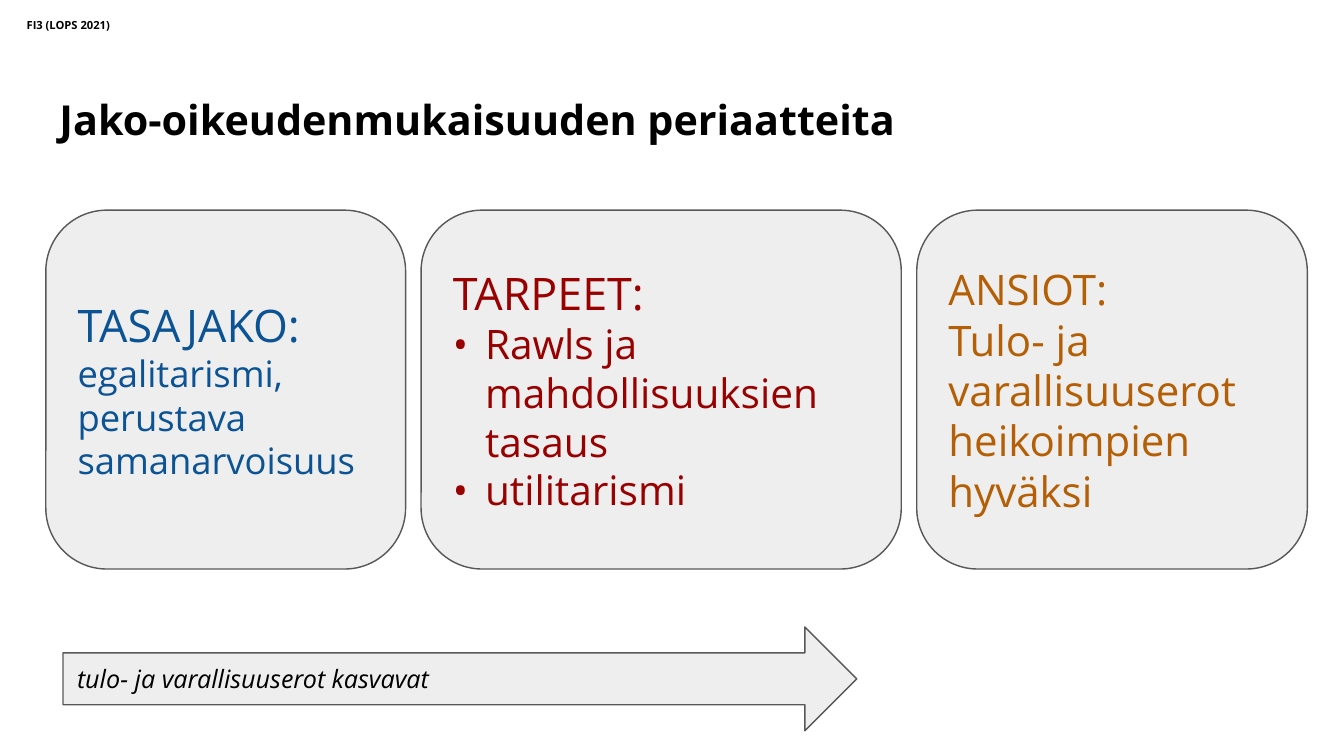
from dataclasses import dataclass

from lxml import etree
from pptx import Presentation
from pptx import util as u
from pptx.dml.color import RGBColor
from pptx.enum import shapes, text
from pptx.oxml import ns

WIDTH, HEIGHT = u.Inches(26.67), u.Inches(15)
FONT = "Open Sans"
BLACK = RGBColor(0x00, 0x00, 0x00)
PANEL = RGBColor(0xEE, 0xEE, 0xEE)
OUTLINE = RGBColor(0x58, 0x58, 0x58)
BLUE = RGBColor(0x0B, 0x53, 0x94)
RED = RGBColor(0x99, 0x00, 0x00)
ORANGE = RGBColor(0xB4, 0x5F, 0x06)

# Percentages of the slide's width (x) and height (y)
CARD_LEFT, CARD_GAP, CARD_INSET = 3.41, 1.15, 1.35
CARD_TOP, CARD_HEIGHT = 27.8, 47.47


@dataclass(frozen=True)
class Area:
    """A rectangle in percentages of the slide's size."""
    left: float
    top: float
    width: float
    height: float

    def lengths(self) -> tuple[int, int, int, int]:
        return (int(WIDTH * self.left / 100), int(HEIGHT * self.top / 100),
                int(WIDTH * self.width / 100), int(HEIGHT * self.height / 100))


@dataclass(frozen=True)
class Line:
    words: str
    size: int
    color: RGBColor = BLACK
    bold: bool = False
    italic: bool = False
    bullet: bool = False


@dataclass(frozen=True)
class Card:
    width: float
    text_height: float
    lines: list[Line]


CARDS = [
    Card(26.77, 31.33, [Line("TASAJAKO:", 64, BLUE),
                        Line("egalitarismi,", 52, BLUE),
                        Line("perustava samanarvoisuus", 52, BLUE)]),
    Card(35.73, 40.87, [Line("TARPEET:", 64, RED),
                        Line("Rawls ja mahdollisuuksien tasaus", 58, RED, bullet=True),
                        Line("utilitarismi", 58, RED, bullet=True)]),
    Card(29.06, 41.53, [Line("ANSIOT:", 60, ORANGE),
                        Line("Tulo- ja varallisuuserot heikoimpien hyväksi", 60, ORANGE)]),
]


def add_bullet(para) -> None:
    properties = para._p.get_or_add_pPr()
    indent = u.Inches(0.64)
    properties.set("marL", str(indent))
    properties.set("indent", str(-indent))
    etree.SubElement(properties, ns.qn("a:buFont")).set("typeface", FONT)
    etree.SubElement(properties, ns.qn("a:buChar")).set("char", "•")


def add_text(parent, area: Area, lines: list[Line], inset: float = 0.27,
             anchor=text.MSO_ANCHOR.MIDDLE, wrap: bool = True,
             fit=text.MSO_AUTO_SIZE.SHAPE_TO_FIT_TEXT) -> None:
    frame = parent.add_textbox(*area.lengths()).text_frame
    frame.word_wrap = wrap
    frame.auto_size = fit
    frame.vertical_anchor = anchor
    frame.margin_left = frame.margin_right = u.Inches(inset)
    frame.margin_top = frame.margin_bottom = u.Inches(inset)
    frame.text = "\n".join(line.words for line in lines)
    for para, line in zip(frame.paragraphs, lines):
        if line.bullet:
            add_bullet(para)
        for span in para.runs:
            span.font.name = FONT
            span.font.size = u.Pt(line.size)
            span.font.color.rgb = line.color
            span.font.bold = line.bold
            span.font.italic = line.italic


def add_panel(parent, kind, area: Area, *adjustments: float) -> None:
    panel = parent.add_shape(kind, *area.lengths())
    panel.shadow.inherit = False
    panel.fill.solid()
    panel.fill.fore_color.rgb = PANEL
    panel.line.color.rgb = OUTLINE
    panel.line.width = u.Pt(2)
    for index, value in enumerate(adjustments):
        panel.adjustments[index] = value


def add_card(page, left: float, card: Card) -> None:
    group = page.shapes.add_group_shape().shapes
    add_panel(group, shapes.MSO_SHAPE.ROUNDED_RECTANGLE,
              Area(left, CARD_TOP, card.width, CARD_HEIGHT), 0.17)
    text_top = CARD_TOP + (CARD_HEIGHT - card.text_height) / 2
    add_text(group, Area(left + CARD_INSET, text_top,
                         card.width - 2 * CARD_INSET, card.text_height), card.lines)


def main() -> None:
    deck = Presentation()
    deck.slide_width, deck.slide_height = WIDTH, HEIGHT
    page = deck.slides.add_slide(deck.slide_layouts[6])

    # Three principles side by side
    left = CARD_LEFT
    for card in CARDS:
        add_card(page, left, card)
        left += card.width + CARD_GAP

    # Arrow of growing differences
    arrow = page.shapes.add_group_shape().shapes
    add_panel(arrow, shapes.MSO_SHAPE.RIGHT_ARROW,
              Area(4.69, 82.93, 59.06, 13.73), 0.5, 0.5)
    add_text(arrow, Area(4.72, 85.73, 57.03, 8.07),
             [Line("tulo- ja varallisuuserot kasvavat", 36, italic=True)])

    # Course label and title
    add_text(page.shapes, Area(1.76, 1.87, 6.67, 2.8),
             [Line("FI3 (LOPS 2021)", 16, bold=True)], inset=0.06, wrap=False)
    add_text(page.shapes, Area(CARD_LEFT, 10.67, 93.18, 11.13),
             [Line("Jako-oikeudenmukaisuuden periaatteita", 59, bold=True)],
             anchor=text.MSO_ANCHOR.TOP, fit=text.MSO_AUTO_SIZE.NONE)

    deck.save("out.pptx")


if __name__ == "__main__":
    main()
